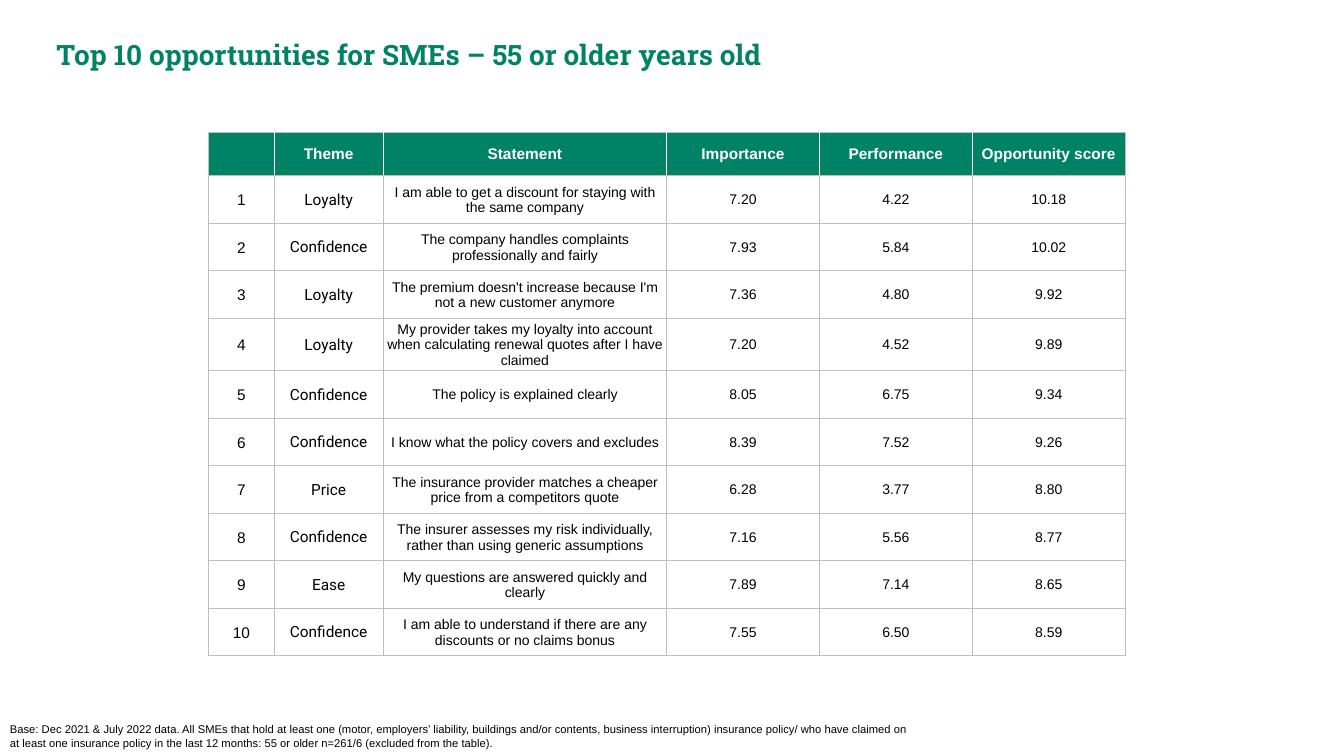
from dataclasses import dataclass

from lxml import etree
from pptx import Presentation
from pptx.dml.color import RGBColor
from pptx.enum.text import MSO_ANCHOR, MSO_AUTO_SIZE, PP_ALIGN
from pptx.oxml.ns import qn
from pptx.util import Inches, Pt

LEFT, CENTER = PP_ALIGN.LEFT, PP_ALIGN.CENTER
TOP, MIDDLE = MSO_ANCHOR.TOP, MSO_ANCHOR.MIDDLE
NO_AUTOFIT = MSO_AUTO_SIZE.NONE
TITLE_ONLY = 5
GRID = Inches(0.1)


@dataclass(frozen=True)
class Theme:
    """Colours, fonts and type sizes of the deck."""
    green: str = "008265"
    white: str = "FFFFFF"
    black: str = "000000"
    rule: str = "BFBFBF"
    slab: str = "Roboto Slab"
    label: str = "Roboto"
    body: str = "Arial"
    title_size: int = 20
    label_size: int = 11
    body_size: int = 10
    note_size: int = 8
    rule_width: float = 0.75
    divider_width: float = 1


THEME = Theme()
TITLE = "Top 10 opportunities for SMEs – 55 or older years old"
NOTE = ("Base: Dec 2021 & July 2022 data. All SMEs that hold at least one (motor, employers’ liability, "
        "buildings and/or contents, business interruption) insurance policy/ who have claimed on at least "
        "one insurance policy in the last 12 months: 55 or older n=261/6 (excluded from the table).")
HEADINGS = ("", "Theme", "Statement", "Importance", "Performance", "Opportunity score")
OPPORTUNITIES = (
    ("Loyalty", "I am able to get a discount for staying with the same company", "7.20", "4.22", "10.18"),
    ("Confidence", "The company handles complaints professionally and fairly", "7.93", "5.84", "10.02"),
    ("Loyalty", "The premium doesn't increase because I'm not a new customer anymore", "7.36", "4.80", "9.92"),
    ("Loyalty", "My provider takes my loyalty into account when calculating renewal quotes after I have claimed",
     "7.20", "4.52", "9.89"),
    ("Confidence", "The policy is explained clearly", "8.05", "6.75", "9.34"),
    ("Confidence", "I know what the policy covers and excludes", "8.39", "7.52", "9.26"),
    ("Price", "The insurance provider matches a cheaper price from a competitors quote", "6.28", "3.77", "8.80"),
    ("Confidence", "The insurer assesses my risk individually, rather than using generic assumptions",
     "7.16", "5.56", "8.77"),
    ("Ease", "My questions are answered quickly and clearly", "7.89", "7.14", "8.65"),
    ("Confidence", "I am able to understand if there are any discounts or no claims bonus", "7.55", "6.50", "8.59"),
)
COLUMN_WEIGHTS = (6.5, 10.8, 28.1, 15.15, 15.15, 15.15)
ROW_WEIGHTS = (4.35,) + (4.71,) * 3 + (5.2,) + (4.71,) * 6


def grid_box(left, top, width, height):
    """Turn grid columns and rows into slide lengths."""
    return tuple(round(length * GRID) for length in (left, top, width, height))


def write(frame, text, font, size, color, bold=False, align=LEFT, anchor=TOP):
    """Put one formatted paragraph into a text frame."""
    frame.text = text
    frame.word_wrap = True
    frame.vertical_anchor = anchor
    para = frame.paragraphs[0]
    para.alignment = align
    for span in para.runs:
        span.font.name = font
        span.font.size = Pt(size)
        span.font.bold = bold
        span.font.color.rgb = RGBColor.from_string(color)


def add_borders(cell, sides):
    """Draw the four cell borders, given in left, right, top, bottom order."""
    properties = cell._tc.get_or_add_tcPr()
    for position, (name, (color, width)) in enumerate(zip("LRTB", sides)):
        line = etree.Element(qn(f"a:ln{name}"), w=str(Pt(width)))
        fill = etree.SubElement(line, qn("a:solidFill"))
        etree.SubElement(fill, qn("a:srgbClr"), val=color)
        properties.insert(position, line)


def format_cell(cell, text, row, column):
    """Fill, border and write one table cell."""
    rule = (THEME.rule, THEME.rule_width)
    divider = (THEME.white, THEME.divider_width)
    header = row == 0
    cell.margin_left = cell.margin_right = cell.margin_top = Inches(0.01)
    cell.margin_bottom = 0
    if header:
        cell.fill.solid()
        cell.fill.fore_color.rgb = RGBColor.from_string(THEME.green)
    else:
        cell.fill.background()
    left = divider if header and column > 0 else rule
    right = divider if header and column < len(HEADINGS) - 1 else rule
    add_borders(cell, (left, right, rule, rule))
    font = THEME.label if column == 1 and not header else THEME.body
    size = THEME.label_size if header or column < 2 else THEME.body_size
    color = THEME.white if header else THEME.black
    write(cell.text_frame, text, font, size, color, header, CENTER)
    cell.vertical_anchor = MIDDLE


def add_title(page, box):
    """Place the slide title."""
    title = page.shapes.title
    title.left, title.top, title.width, title.height = box
    write(title.text_frame, TITLE, THEME.slab, THEME.title_size, THEME.green, True, anchor=MIDDLE)
    title.text_frame.auto_size = NO_AUTOFIT


def add_opportunities(page, box):
    """Place the ranked table of opportunities."""
    rows = [HEADINGS] + [(str(rank), *entry) for rank, entry in enumerate(OPPORTUNITIES, 1)]
    table = page.shapes.add_table(len(rows), len(HEADINGS), *box).table
    table.horz_banding = False
    for column, weight in zip(table.columns, COLUMN_WEIGHTS):
        column.width = round(box[2] * weight / sum(COLUMN_WEIGHTS))
    for row, weight in zip(table.rows, ROW_WEIGHTS):
        row.height = round(box[3] * weight / sum(ROW_WEIGHTS))
    for row, texts in enumerate(rows):
        for column, text in enumerate(texts):
            format_cell(table.cell(row, column), text, row, column)


def add_note(page, box):
    """Place the sample note at the foot of the slide."""
    note = page.shapes.add_textbox(*box)
    write(note.text_frame, NOTE, THEME.body, THEME.note_size, THEME.black)


def main():
    """Build and save the deck."""
    deck = Presentation()
    deck.slide_width, deck.slide_height = Inches(13.33), Inches(7.5)
    page = deck.slides.add_slide(deck.slide_layouts[TITLE_ONLY])
    add_title(page, grid_box(4.6, 3.2, 122.8, 4.4))
    add_opportunities(page, grid_box(20.7, 13.1, 90.9, 52))
    add_note(page, grid_box(0, 71.2, 92.3, 3.8))
    deck.save("out.pptx")


if __name__ == "__main__":
    main()
